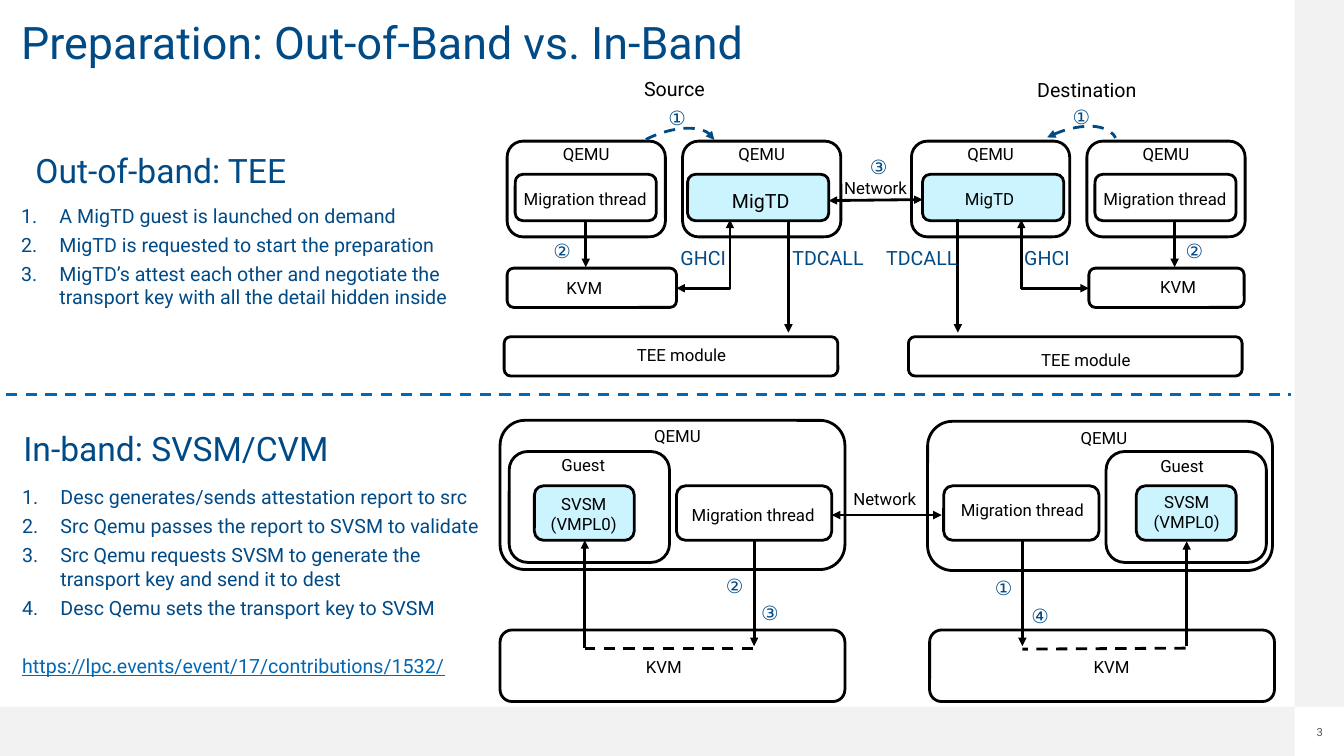
from lxml import etree
from pptx import Presentation
from pptx.dml.color import RGBColor
from pptx.enum import dml, shapes, text
from pptx.oxml.ns import qn
from pptx.util import Inches, Pt

FONT = "Roboto"
COLORS = {"ink": "000000", "navy": "004A86", "blue": "0068B5", "paper": "FFFFFF",
          "sky": "CCF4FF", "band": "F2F2F2", "gray": "525252"}

TITLE = "Preparation: Out-of-Band vs. In-Band"
BANDS = [(0, 7.01, 12.84, 0.49), (12.84, 0, 0.49, 7.01)]

# Each size is followed by the corners (left, top) where that box stands, back to front.
BOXES = [
    ("paper", (3.42, 1.48), [(4.96, 4.17), (9.2, 4.18)]),                            # QEMU, in-band
    ("paper", (3.42, 0.71), [(4.96, 6.25), (9.22, 6.25)]),                           # KVM, in-band
    ("paper", (1.59, 1.1), [(5.05, 4.48), (10.97, 4.48)]),                           # guests
    ("paper", (1.54, 0.54), [(6.71, 4.82), (9.36, 4.82)]),                           # migration threads
    ("sky", (0.99, 0.54), [(5.3, 4.82), (11.27, 4.82)]),                             # SVSM
    ("paper", (3.31, 0.39), [(5, 3.34), (9.01, 3.34)]),                              # TEE modules
    ("paper", (1.68, 0.39), [(5.03, 2.66)]),                                         # KVM, source
    ("paper", (1.54, 0.39), [(10.8, 2.66)]),                                         # KVM, destination
    ("paper", (1.57, 0.95), [(5.03, 1.4), (6.77, 1.4), (9.04, 1.4), (10.78, 1.4)]),  # QEMU
    ("paper", (1.4, 0.46), [(5.11, 1.73), (10.86, 1.73)]),                           # migration threads
    ("sky", (1.4, 0.46), [(6.82, 1.73), (9.15, 1.73)]),                              # MigTD
]

# (from, to, ends that carry an arrowhead)
ARROWS = [
    ((7.48, 5.36), (7.48, 6.41), ["tail"]),
    ((5.8, 6.43), (5.8, 5.36), ["tail"]),
    ((8.25, 5.11), (9.34, 5.11), ["head", "tail"]),
    ((11.77, 6.41), (11.77, 5.37), ["tail"]),
    ((10.14, 5.36), (10.14, 6.41), ["tail"]),
    ((5.81, 2.19), (5.81, 2.65), ["tail"]),
    ((11.65, 2.18), (11.65, 2.65), ["tail"]),
    ((8.22, 1.99), (9.15, 1.98), ["head", "tail"]),
    ((7.82, 3.3), (7.82, 2.19), ["head"]),
    ((9.5, 3.3), (9.5, 2.17), ["head"]),
]
GHCI_ELBOWS = [((6.71, 2.86), (7.24, 2.18)), ((10.8, 2.86), (10.13, 2.18))]
DASHES = [((0.06, 3.91), (12.8, 3.91), "blue"),
          ((7.47, 6.43), (5.8, 6.43), "ink"),
          ((11.76, 6.43), (10.14, 6.44), "ink")]
ARCS = [((9.92, 1.33), "head"), ((5.94, 1.35), "tail")]

# Centred names: (text, size, width, corners)
NAMES = [
    ("Source", 14, 1.42, [(5.98, 0.76)]),
    ("Destination", 14, 1.42, [(10.07, 0.77)]),
    ("QEMU", 12, 1.57, [(5.03, 1.43), (6.77, 1.43), (9.04, 1.43), (10.78, 1.43)]),
    ("Migration thread", 12, 1.51, [(5.05, 1.87), (10.8, 1.87)]),
    ("MigTD", 14, 1.51, [(6.79, 1.87)]),
    ("MigTD", 12, 1.51, [(9.06, 1.87)]),
    ("Network", 12, 0.81, [(8.28, 1.76)]),
    ("KVM", 12, 0.93, [(5.33, 2.76), (11.22, 2.75)]),
    ("TEE module", 12, 1.94, [(5.79, 3.42), (9.8, 3.47)]),
    ("QEMU", 12, 2.94, [(5.25, 4.22), (9.48, 4.24)]),
    ("Guest", 12, 1.59, [(4.99, 4.51), (10.93, 4.52)]),
    ("Migration thread", 12, 1.48, [(6.73, 5.01), (9.4, 4.96)]),
    ("SVSM\n(VMPL0)", 12, 1.48, [(5.05, 4.9), (11.03, 4.88)]),
    ("Network", 12, 1.59, [(7.98, 4.85)]),
    ("KVM", 12, 0.91, [(6.13, 6.52), (10.57, 6.52)]),
]

# Step marks and calls: (text, width, corners)
MARKS = [
    ("①", 0.35, [(6.53, 1.03), (10.54, 1.02), (9.77, 5.69)]),
    ("②", 0.35, [(5.39, 2.35), (11.66, 2.35), (7.1, 5.67)]),
    ("③", 0.35, [(8.53, 1.51), (7.45, 5.94)]),
    ("④", 0.35, [(10.13, 5.97)]),
    ("GHCI", 0.72, [(6.65, 2.42), (10.06, 2.42)]),
    ("TDCALL", 0.92, [(7.76, 2.42), (8.69, 2.42)]),
]

HEADINGS = [("Out-of-band: TEE", (-0.25, 1.48)), ("In-band: SVSM/CVM", (-0.1, 4.24))]
OUT_OF_BAND_STEPS = [
    "A MigTD guest is launched on demand",
    "MigTD is requested to start the preparation",
    "MigTD’s attest each other and negotiate the transport key with all the detail hidden inside",
]
IN_BAND_STEPS = [
    "Desc generates/sends attestation report to src",
    "Src Qemu passes the report to SVSM to validate",
    "Src Qemu requests SVSM to generate the transport key and send it to dest",
    "Desc Qemu sets the transport key to SVSM",
]
SOURCE_URL = "https://lpc.events/event/17/contributions/1532/"


def color(name):
    return RGBColor.from_string(COLORS[name])


def inches(*lengths):
    return [Inches(length) for length in lengths]


def style(target, **values):
    for name, value in values.items():
        setattr(target, name, value)


def style_font(font, size, tint, **values):
    style(font, name=FONT, size=Pt(size), **values)
    font.color.rgb = color(tint)


def style_line(shape, tint="ink", dashed=False, ends=()):
    shape.line.color.rgb = color(tint)
    shape.line.width = Pt(2)
    if dashed:
        shape.line.dash_style = dml.MSO_LINE.DASH
    for end in ends:
        etree.SubElement(shape.line._get_or_add_ln(), qn(f"a:{end}End"), type="triangle")


def add_box(page, kind, frame, fill=None):
    box = page.shapes.add_shape(kind, *inches(*frame))
    box.shadow.inherit = False
    if fill:
        box.fill.solid()
        box.fill.fore_color.rgb = color(fill)
    else:
        box.fill.background()
    return box


def add_line(page, start, end, kind=shapes.MSO_CONNECTOR.STRAIGHT, **look):
    line = page.shapes.add_connector(kind, *inches(*start, *end))
    style_line(line, **look)
    etree.SubElement(line._element.spPr, qn("a:effectLst"))
    return line


def add_text(page, lines, frame, size, tint, align=text.PP_ALIGN.CENTER, padded=False, spacing=None):
    box = page.shapes.add_textbox(*inches(*frame))
    box.text_frame.word_wrap = True
    if not padded:
        style(box.text_frame, margin_left=0, margin_right=0, margin_top=0, margin_bottom=0)
    for number, line in enumerate(lines):
        para = box.text_frame.paragraphs[0] if number == 0 else box.text_frame.add_paragraph()
        para.text = line
        style(para, alignment=align, line_spacing=spacing)
        style_font(para.runs[0].font, size, tint)
    return box


def add_steps(page, steps, frame):
    box = add_text(page, steps, frame, 14, "navy", text.PP_ALIGN.LEFT)
    for para in box.text_frame.paragraphs:
        para.space_after = Pt(4)
        props = para._p.get_or_add_pPr()
        props.set("marL", str(Inches(0.38)))
        props.set("indent", str(-Inches(0.38)))
        etree.SubElement(props, qn("a:buAutoNum"), type="arabicPeriod")
    return box


def add_diagrams(page):
    for fill, size, corners in BOXES:
        for corner in corners:
            style_line(add_box(page, shapes.MSO_SHAPE.ROUNDED_RECTANGLE, corner + size, fill))
    for start, end, ends in ARROWS:
        add_line(page, start, end, ends=ends)
    for start, end in GHCI_ELBOWS:
        elbow = add_line(page, start, end, shapes.MSO_CONNECTOR.ELBOW, ends=["head", "tail"])
        elbow._element.spPr.find(qn("a:prstGeom")).set("prst", "bentConnector2")
    for start, end, tint in DASHES:
        add_line(page, start, end, tint=tint, dashed=True)
    for corner, end in ARCS:
        arc = add_box(page, shapes.MSO_SHAPE.ARC, corner + (1.21, 0.62))
        arc.rotation = 333.3
        style_line(arc, "navy", True, [end])
    for name, size, width, corners in NAMES:
        lines = name.split("\n")
        for corner in corners:
            add_text(page, lines, corner + (width, 0.2 * len(lines)), size, "ink")
    for mark, width, corners in MARKS:
        for corner in corners:
            add_text(page, [mark], corner + (width, 0.31), 14, "navy", text.PP_ALIGN.LEFT, True, 0.9)


def main():
    deck = Presentation()
    style(deck, slide_width=Inches(13.33), slide_height=Inches(7.5))
    page = deck.slides.add_slide(deck.slide_layouts[5])

    title = page.shapes.title
    left, top, width, height = inches(0.21, 0.11, 12.04, 0.68)
    style(title, left=left, top=top, width=width, height=height)
    style(title.text_frame, text=TITLE, margin_left=0, margin_right=0, margin_top=0, margin_bottom=0,
          vertical_anchor=text.MSO_ANCHOR.MIDDLE)
    style(title.text_frame.paragraphs[0], alignment=text.PP_ALIGN.LEFT, line_spacing=0.9)
    style_font(title.text_frame.paragraphs[0].runs[0].font, 32, "navy")

    for frame in BANDS:
        add_box(page, shapes.MSO_SHAPE.RECTANGLE, frame, "band").line.fill.background()
    add_text(page, ["3"], (13.02, 7.2, 0.14, 0.13), 8, "gray")
    add_diagrams(page)

    for heading, corner in HEADINGS:
        add_text(page, [heading], corner + (3.69, 0.47), 24, "navy", padded=True, spacing=0.9)
    add_steps(page, OUT_OF_BAND_STEPS, (0.21, 2.02, 4.53, 1.4))
    steps = add_steps(page, IN_BAND_STEPS, (0.22, 4.81, 4.73, 1.99))
    link = steps.text_frame.add_paragraph()
    link.text = SOURCE_URL
    style(link, space_before=Pt(21), alignment=text.PP_ALIGN.LEFT)
    style_font(link.runs[0].font, 14, "blue", underline=True)

    deck.save("out.pptx")


if __name__ == "__main__":
    main()
